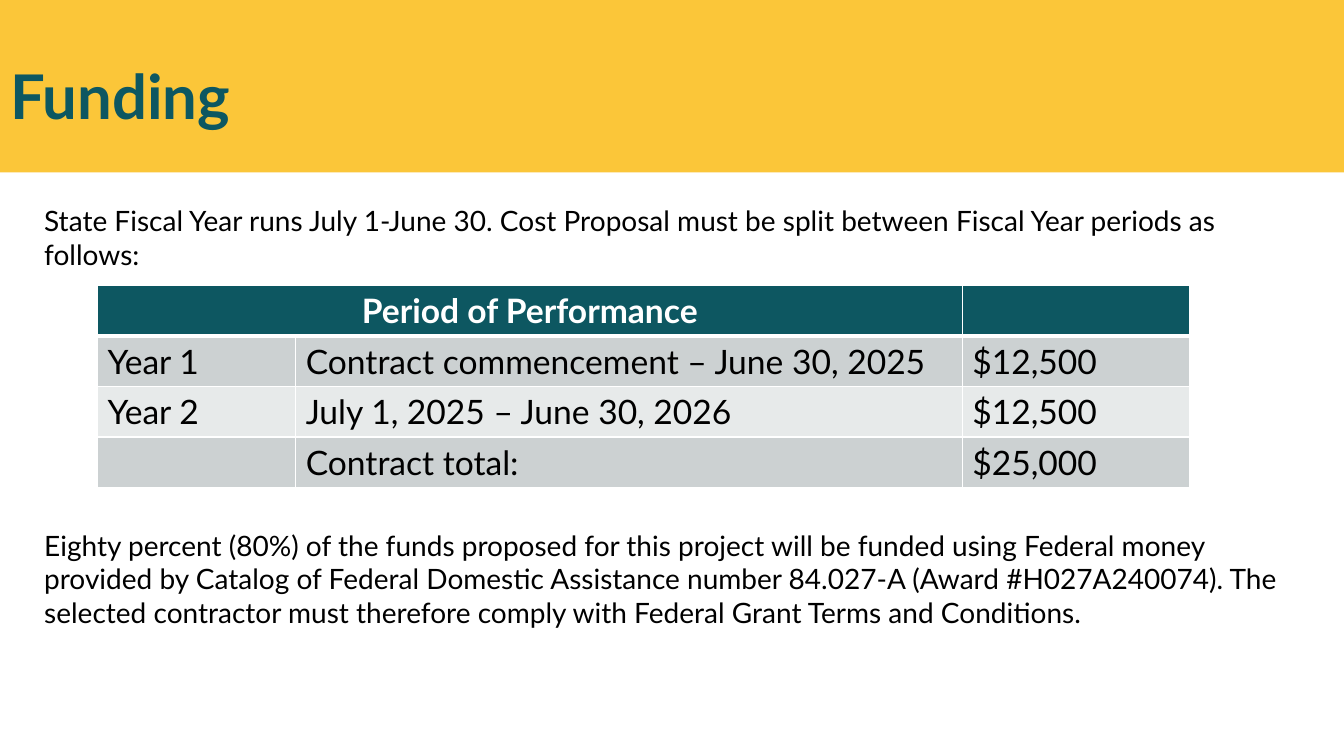
"""Build the funding slide with its period of performance table."""
import pptx
import pptx.dml.color
import pptx.enum.shapes
import pptx.enum.text
import pptx.oxml
import pptx.oxml.ns
import pptx.util

COLORS = {"gold": "FBC639", "teal": "0D5761", "white": "FFFFFF", "black": "000000",
          "odd": "CCD1D2", "even": "E7EAEA"}
ALIGN = pptx.enum.text.PP_ALIGN
FORMATS = {
    "title": {"size": pptx.util.Pt(44), "bold": True, "color": "teal"},
    "header": {"size": pptx.util.Pt(24), "bold": True, "color": "white"},
    "cell": {"size": pptx.util.Pt(24), "bold": False, "color": "black"},
    "body": {"size": pptx.util.Pt(20), "bold": False, "color": "black"},
}
SLIDE_W, SLIDE_H = pptx.util.Inches(13.333), pptx.util.Inches(7.5)
COLUMN_SHARES = (18.15, 61, 20.85)
ROWS = (
    ("Period of Performance", "", ""),
    ("Year 1", "Contract commencement – June 30, 2025", "$12,500"),
    ("Year 2", "July 1, 2025 – June 30, 2026", "$12,500"),
    ("", "Contract total:", "$25,000"),
)
INTRO = ("State Fiscal Year runs July 1-June 30. Cost Proposal must be split "
         "between Fiscal Year periods as follows:")
TERMS = ("Eighty percent (80%) of the funds proposed for this project will be funded "
         "using Federal money provided by Catalog of Federal Domestic Assistance number "
         "84.027-A (Award #H027A240074). The selected contractor must therefore comply "
         "with Federal Grant Terms and Conditions.")


def box(left, top, width, height):
    """Turn percentages of the slide into a box of lengths."""
    return (int(SLIDE_W * left / 100), int(SLIDE_H * top / 100),
            int(SLIDE_W * width / 100), int(SLIDE_H * height / 100))


def rgb(name):
    """Return the named colour."""
    return pptx.dml.color.RGBColor.from_string(COLORS[name])


def paint(filled, name):
    """Give a shape or cell a solid fill."""
    filled.fill.solid()
    filled.fill.fore_color.rgb = rgb(name)


def write(tf, text, style, align=ALIGN.LEFT):
    """Write one formatted paragraph into a text frame."""
    p = tf.paragraphs[0]
    p.alignment = align
    r = p.add_run()
    r.text = text
    r.font.name = "Lato"
    for key, value in FORMATS[style].items():
        if key == "color":
            r.font.color.rgb = rgb(value)
        else:
            setattr(r.font, key, value)
    return p


def add_header(s, band_box, title_box):
    """Place the gold band behind the title placeholder."""
    band = s.shapes.add_shape(pptx.enum.shapes.MSO_SHAPE.RECTANGLE, *band_box)
    paint(band, "gold")
    band.line.fill.background()
    band.shadow.inherit = False
    title = s.shapes.title
    title.element.addprevious(band.element)
    title.left, title.top, title.width, title.height = title_box
    tf = title.text_frame
    tf.auto_size = pptx.enum.text.MSO_AUTO_SIZE.NONE
    tf.vertical_anchor = pptx.enum.text.MSO_ANCHOR.MIDDLE
    write(tf, "Funding", "title").line_spacing = 0.9


def add_text(s, text, text_box):
    """Place a wrapped body paragraph."""
    tf = s.shapes.add_textbox(*text_box).text_frame
    tf.word_wrap = True
    write(tf, text, "body")


def add_borders(cell, top, bottom):
    """Draw white cell borders with the given top and bottom widths in points."""
    props = cell._tc.get_or_add_tcPr()
    for side, points in (("L", 1), ("R", 1), ("T", top), ("B", bottom)):
        props.append(pptx.oxml.parse_xml(
            f'<a:ln{side} {pptx.oxml.ns.nsdecls("a")} w="{pptx.util.Pt(points)}">'
            f'<a:solidFill><a:srgbClr val="{COLORS["white"]}"/></a:solidFill></a:ln{side}>'))


def add_periods(s, table_box):
    """Place the period table with a merged heading and banded rows."""
    table = s.shapes.add_table(len(ROWS), len(COLUMN_SHARES), *table_box).table
    for column, share in zip(table.columns, COLUMN_SHARES):
        column.width = int(table_box[2] * share / 100)
    for i, row in enumerate(ROWS):
        fill = "teal" if i == 0 else "odd" if i % 2 else "even"
        for j, text in enumerate(row):
            cell = table.cell(i, j)
            add_borders(cell, 3 if i == 1 else 1, 3 if i == 0 else 1)
            paint(cell, fill)
            if text:
                write(cell.text_frame, text, "cell" if i else "header",
                      ALIGN.LEFT if i else ALIGN.CENTER)
    table.cell(0, 0).merge(table.cell(0, 1))


def main():
    """Build and save the slide."""
    prs = pptx.Presentation()
    prs.slide_width, prs.slide_height = SLIDE_W, SLIDE_H
    s = prs.slides.add_slide(prs.slide_layouts.get_by_name("Title Only"))
    add_header(s, box(0, 0, 100, 22.8), box(0, 3.47, 93.15, 19.33))
    add_periods(s, box(7.25, 37.8, 81.3, 26.67))
    add_text(s, INTRO, box(2.55, 26.27, 92.4, 10.27))
    add_text(s, TERMS, box(2.55, 69.2, 94.35, 14.8))
    prs.save("out.pptx")


if __name__ == "__main__":
    main()
